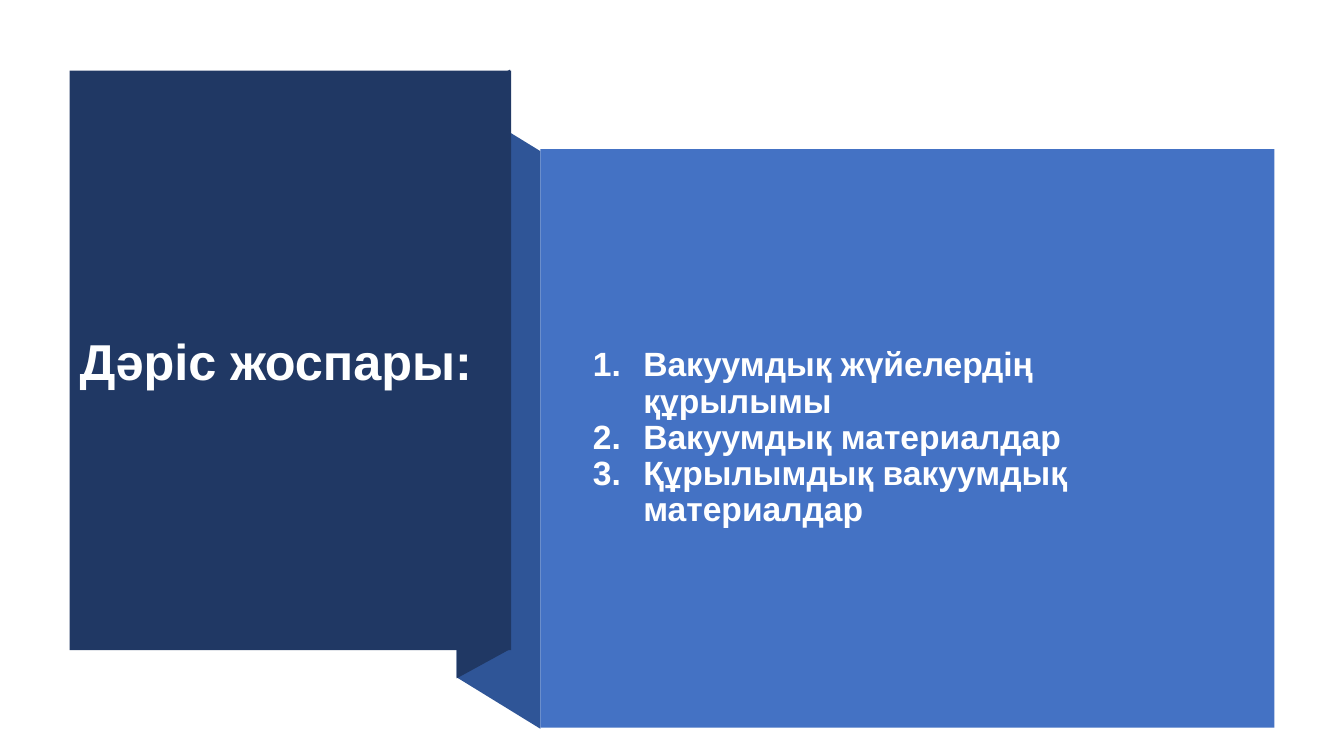
from lxml.etree import SubElement
from pptx import Presentation
from pptx.dml.color import RGBColor
from pptx.enum.shapes import MSO_SHAPE
from pptx.enum.text import MSO_ANCHOR, MSO_AUTO_SIZE, PP_ALIGN
from pptx.oxml.ns import qn
from pptx.util import Inches, Pt

COLORS = {
    "navy": "203864",
    "fold": "2F5597",
    "blue": "4472C4",
    "title": "FEFFFF",
    "text": "FFFFFF",
}
TOPICS = [
    ("Вакуумдық жүйелердің құрылымы", PP_ALIGN.LEFT),
    ("Вакуумдық материалдар", PP_ALIGN.JUSTIFY),
    ("Құрылымдық вакуумдық материалдар", PP_ALIGN.LEFT),
]


class PlanSlide:
    """Draws the elements of the lecture plan in one style."""

    def __init__(self, slide, font="Arial"):
        """Keep the slide and the font."""
        self.slide = slide
        self.font = font

    def paint(self, shape, color):
        """Give a shape a flat fill without outline or shadow."""
        shape.fill.solid()
        shape.fill.fore_color.rgb = RGBColor.from_string(COLORS[color])
        shape.line.fill.background()
        shape.shadow.inherit = False

    def add_panel(self, left, top, width, height, color):
        """Add a rectangular panel."""
        box = [Inches(length) for length in (left, top, width, height)]
        self.paint(self.slide.shapes.add_shape(MSO_SHAPE.RECTANGLE, *box), color)

    def add_fold(self, points, color):
        """Add a closed polygon for a side of the ribbon."""
        start, *corners = [(Inches(x), Inches(y)) for x, y in points]
        builder = self.slide.shapes.build_freeform(*start)
        builder.add_line_segments(corners, close=True)
        self.paint(builder.convert_to_shape(), color)

    def place(self, placeholder, left, top, width, height, anchor):
        """Move a placeholder to the front and return its text frame."""
        self.slide.shapes.element.append(placeholder.element)
        placeholder.left, placeholder.top = Inches(left), Inches(top)
        placeholder.width, placeholder.height = Inches(width), Inches(height)
        frame = placeholder.text_frame
        frame.word_wrap = True
        frame.auto_size = MSO_AUTO_SIZE.NONE
        frame.vertical_anchor = anchor
        return frame

    def add_run(self, paragraph, text, size, color):
        """Add a bold run to a paragraph."""
        run = paragraph.add_run()
        run.text = text
        run.font.name = self.font
        run.font.size = Pt(size)
        run.font.bold = True
        run.font.color.rgb = RGBColor.from_string(COLORS[color])

    def add_title(self, text, box):
        """Fill the title placeholder."""
        frame = self.place(self.slide.shapes.title, *box, MSO_ANCHOR.TOP)
        paragraph = frame.paragraphs[0]
        paragraph.alignment = PP_ALIGN.LEFT
        self.add_run(paragraph, text, 36, "title")

    def add_numbered_list(self, items, box):
        """Fill the body placeholder with a numbered list."""
        frame = self.place(self.slide.placeholders[1], *box, MSO_ANCHOR.MIDDLE)
        frame.margin_right = Inches(0.2)
        for index, (text, alignment) in enumerate(items):
            paragraph = frame.add_paragraph() if index else frame.paragraphs[0]
            paragraph.alignment = alignment
            paragraph.line_spacing = 0.9
            paragraph.space_before = Pt(0)
            self.add_run(paragraph, text, 24, "text")
            properties = paragraph._p.get_or_add_pPr()
            properties.set("marL", str(Inches(0.5)))
            properties.set("indent", str(Inches(-0.5)))
            SubElement(properties, qn("a:buFont"), typeface=self.font)
            SubElement(properties, qn("a:buAutoNum"), type="arabicPeriod")


def main():
    """Build and save the presentation."""
    presentation = Presentation()
    presentation.slide_width = Inches(13.33)
    presentation.slide_height = Inches(7.5)
    slide = presentation.slides.add_slide(presentation.slide_layouts[1])
    plan = PlanSlide(slide)
    plan.add_fold([(5.36, 7.23), (4.53, 6.72), (4.53, 0.99), (5.36, 1.5)], "fold")
    plan.add_fold([(5.06, 6.44), (4.53, 6.73), (4.53, 0.98), (5.06, 0.69)], "navy")
    plan.add_panel(0.69, 0.7, 4.38, 5.75, "navy")
    plan.add_panel(5.36, 1.48, 7.28, 5.74, "blue")
    plan.add_numbered_list(TOPICS, (5.78, 1.98, 6.51, 4.74))
    plan.add_title("Дәріс жоспары:", (0.69, 3.22, 4.73, 0.71))
    presentation.save("out.pptx")


if __name__ == "__main__":
    main()
